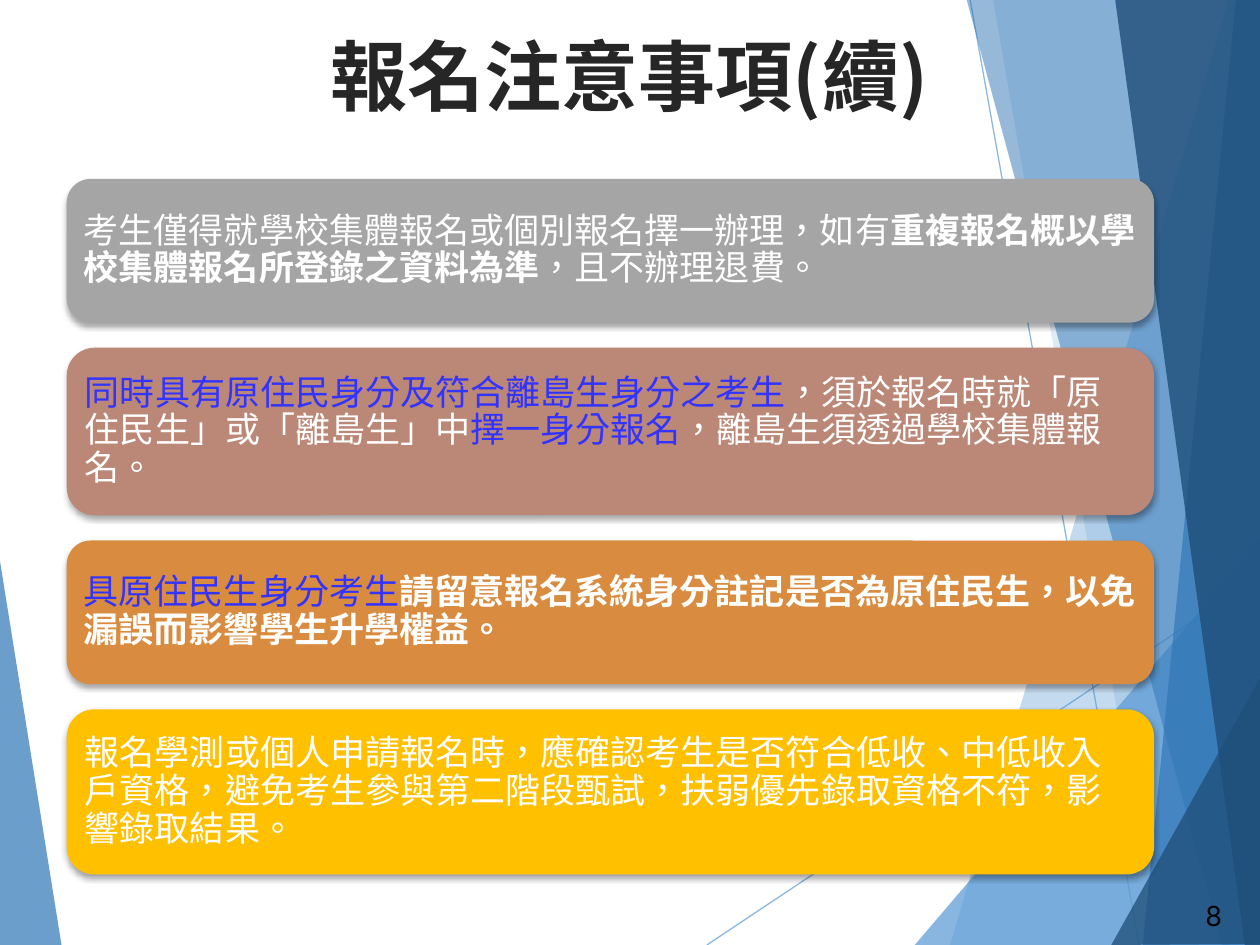
from dataclasses import dataclass

from lxml.etree import SubElement
from pptx import Presentation
from pptx.dml.color import RGBColor
from pptx.enum.shapes import MSO_CONNECTOR, MSO_SHAPE
from pptx.enum.text import MSO_ANCHOR, PP_ALIGN
from pptx.oxml.ns import qn
from pptx.util import Inches, Pt


@dataclass(frozen=True)
class Theme:
    sky: str = "5B9BD5"
    blue: str = "2E75B6"
    navy: str = "1F4E79"
    title: str = "262626"
    black: str = "000000"
    white: str = "FFFFFF"
    accent: str = "3333FF"
    chinese_font: str = "Noto Sans CJK SC"
    body_font: str = "Times New Roman"
    number_font: str = "Lato"
    title_size: int = 44
    body_size: int = 20
    number_size: int = 16


THEME = Theme()


@dataclass(frozen=True)
class Facet:
    color: str
    opacity: int
    points: tuple


@dataclass(frozen=True)
class Span:
    text: str
    color: str = THEME.white
    bold: bool = False


@dataclass(frozen=True)
class Note:
    fill: str
    height: float
    spans: tuple


RAYS = [((5.61, 7.5), (10.01, 4.57)), ((7.7, 0), (9.04, 7.5))]

FACETS = [
    Facet(THEME.sky, 36, ((9.75, 0), (7.54, 7.5), (10.02, 7.51), (10.01, 0.01))),
    Facet(THEME.sky, 20, ((7.88, -0.01), (9.19, 7.5), (10.01, 7.5), (10.01, -0.01))),
    Facet(THEME.sky, 72, ((7.26, 7.5), (10, 4.29), (10.01, 7.5))),
    Facet(THEME.blue, 50, ((7.67, -0.01), (9.7, 7.5), (10.01, 7.49), (10.01, -0.01))),
    Facet(THEME.blue, 66, ((9.81, -0.01), (9.07, 7.5), (10.01, 7.5), (10, -0.01))),
    Facet(THEME.navy, 80, ((8.85, -0.01), (9.88, 7.5), (10.02, 7.5), (10, -0.01))),
    Facet(THEME.navy, 76, ((8.82, 7.5), (10.02, 5.35), (10.02, 7.49))),
    Facet(THEME.blue, 70, ((-0.01, 4.39), (0.49, 7.51), (-0.01, 7.5))),
]

NOTES = [
    Note("A5A5A5", 1.14, (
        Span("考生僅得就學校集體報名或個別報名擇一辦理，如有"),
        Span("重複報名概以學校集體報名所登錄之資料為準", bold=True),
        Span("，且不辦理退費。"))),
    Note("BB8776", 1.33, (
        Span("同時具有原住民身分及符合離島生身分之考生", THEME.accent),
        Span("，須於報名時就「原住民生」或「離島生」中"),
        Span("擇一身分報名", THEME.accent),
        Span("，離島生須透過學校集體報名。"))),
    Note("D98C3F", 1.14, (
        Span("具原住民生身分考生", THEME.accent),
        Span("請留意報名系統身分註記是否為原住民生，以免漏誤而影響學生升學權益。",
             bold=True))),
    Note("FFC000", 1.31, (
        Span("報名學測或個人申請報名時，應確認考生是否符合低收、中低收入戶資格，"
             "避免考生參與第二階段甄試，扶弱優先錄取資格不符，影響錄取結果。"),)),
]
NOTE_LEFT, NOTE_TOP, NOTE_WIDTH, NOTE_GAP = 0.53, 1.42, 8.63, 0.2


def set_opacity(color_format, percent: int) -> None:
    """Add transparency to a solid fill, which holds the only srgbClr."""
    SubElement(color_format, qn("a:alpha"), val=str(percent * 1000))


def draw_ray(page, start: tuple, end: tuple) -> None:
    ray = page.shapes.add_connector(
        MSO_CONNECTOR.STRAIGHT, *(Inches(value) for value in start + end))
    ray.line.color.rgb = RGBColor.from_string(THEME.sky)
    ray.line.width = Pt(0.75)
    properties = ray._element.spPr
    set_opacity(next(properties.iter(qn("a:srgbClr"))), 70)
    SubElement(properties, qn("a:effectLst"))


def draw_facet(page, facet: Facet) -> None:
    first, *rest = [(Inches(x), Inches(y)) for x, y in facet.points]
    builder = page.shapes.build_freeform(*first)
    builder.add_line_segments(rest, close=True)
    shape = builder.convert_to_shape()
    shape.shadow.inherit = False
    shape.fill.solid()
    shape.fill.fore_color.rgb = RGBColor.from_string(facet.color)
    set_opacity(next(shape._element.spPr.iter(qn("a:srgbClr"))), facet.opacity)
    shape.line.fill.background()


def write_span(paragraph, span: Span, font_name: str, size: int) -> None:
    run = paragraph.add_run()
    run.text = span.text
    run.font.name = font_name
    run.font.size = Pt(size)
    run.font.bold = span.bold
    run.font.color.rgb = RGBColor.from_string(span.color)
    properties = run._r.get_or_add_rPr()
    properties.set("lang", "zh-TW")
    SubElement(properties, qn("a:ea"), typeface=THEME.chinese_font)


def draw_label(page, span: Span, bounds: tuple, font_name: str, size: int,
               align: PP_ALIGN, anchor: MSO_ANCHOR) -> None:
    box = page.shapes.add_textbox(*(Inches(value) for value in bounds))
    frame = box.text_frame
    frame.word_wrap = True
    frame.vertical_anchor = anchor
    paragraph = frame.paragraphs[0]
    paragraph.alignment = align
    write_span(paragraph, span, font_name, size)


def add_soft_shadow(shape) -> None:
    shape.shadow.inherit = False
    effects = shape._element.spPr.find(qn("a:effectLst"))
    shadow = SubElement(effects, qn("a:outerShdw"), blurRad=str(Pt(3)),
                        dist=str(Pt(2)), dir="5400000", rotWithShape="0")
    color = SubElement(shadow, qn("a:srgbClr"), val=THEME.black)
    set_opacity(color, 35)


def draw_note(page, note: Note, top: float) -> None:
    card = page.shapes.add_shape(
        MSO_SHAPE.ROUNDED_RECTANGLE, Inches(NOTE_LEFT), Inches(top),
        Inches(NOTE_WIDTH), Inches(note.height))
    card.fill.solid()
    card.fill.fore_color.rgb = RGBColor.from_string(note.fill)
    card.line.fill.background()
    add_soft_shadow(card)
    frame = card.text_frame
    frame.word_wrap = True
    frame.vertical_anchor = MSO_ANCHOR.MIDDLE
    frame.margin_left = frame.margin_right = Inches(0.08)
    frame.margin_top = frame.margin_bottom = Inches(0.08)
    paragraph = frame.paragraphs[0]
    paragraph.alignment = PP_ALIGN.LEFT
    paragraph.line_spacing = 0.9
    after = SubElement(paragraph._p.get_or_add_pPr(), qn("a:spcAft"))
    SubElement(after, qn("a:spcPct"), val="35000")
    for span in note.spans:
        write_span(paragraph, span, THEME.body_font, THEME.body_size)


def main() -> None:
    deck = Presentation()
    deck.slide_width, deck.slide_height = Inches(10), Inches(7.5)
    page = deck.slides.add_slide(deck.slide_layouts[6])

    # Faceted background
    for start, end in RAYS:
        draw_ray(page, start, end)
    for facet in FACETS:
        draw_facet(page, facet)

    # Page number and title
    draw_label(page, Span("8", THEME.black), (9.47, 7.08, 0.52, 0.37),
               THEME.number_font, THEME.number_size, PP_ALIGN.LEFT, MSO_ANCHOR.TOP)
    draw_label(page, Span("報名注意事項(續)", THEME.title, True),
               (0.45, 0.24, 9.09, 0.71), THEME.chinese_font, THEME.title_size,
               PP_ALIGN.CENTER, MSO_ANCHOR.MIDDLE)

    # Stacked notes
    top = NOTE_TOP
    for note in NOTES:
        draw_note(page, note, top)
        top += note.height + NOTE_GAP

    deck.save("out.pptx")


if __name__ == "__main__":
    main()
